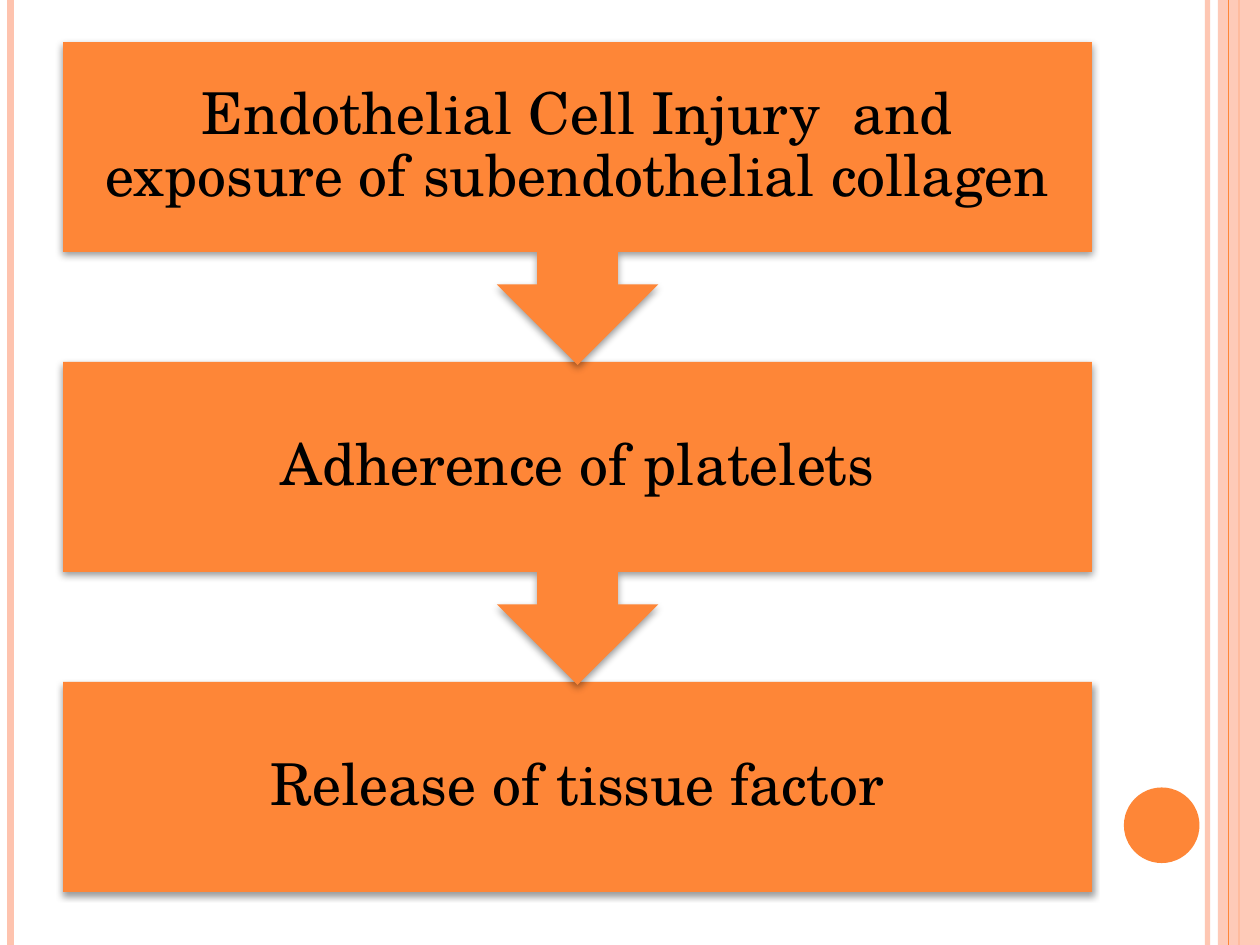
from dataclasses import dataclass

from lxml import etree
from pptx import Presentation
from pptx.dml.color import RGBColor
from pptx.enum.shapes import MSO_CONNECTOR, MSO_SHAPE
from pptx.enum.text import MSO_ANCHOR, PP_ALIGN
from pptx.oxml.ns import qn
from pptx.util import Pt

STRAIGHT = MSO_CONNECTOR.STRAIGHT
RECTANGLE = MSO_SHAPE.RECTANGLE
OVAL = MSO_SHAPE.OVAL
CALLOUT = MSO_SHAPE.UP_ARROW_CALLOUT
MIDDLE = MSO_ANCHOR.MIDDLE
CENTER = PP_ALIGN.CENTER

PAGE_WIDTH, PAGE_HEIGHT = 720, 540
STEP_LEFT, STEP_TOP, STEP_WIDTH, STEP_HEIGHT = 36, 24, 588, 120
STEP_PITCH, CALLOUT_HEIGHT = 182.86, 184.56

STEPS = [
    "Endothelial Cell Injury  and exposure of subendothelial collagen",
    "Adherence of platelets",
    "Release of tissue factor",
]


@dataclass(frozen=True)
class Theme:
    accent: RGBColor = RGBColor(0xFE, 0x86, 0x37)
    pale: RGBColor = RGBColor(0xFE, 0xC3, 0xAE)
    ink: RGBColor = RGBColor(0, 0, 0)
    font: str = "TeX Gyre Schola"
    step_size: float = 33
    step_inset: float = 18.5


class Painter:
    def __init__(self, page, theme):
        self.page = page
        self.theme = theme

    def set_opacity(self, owner, percent):
        for color in owner.iter(qn("a:srgbClr")):
            etree.SubElement(color, qn("a:alpha"), val=str(percent * 1000))

    def add_shadow(self, shape):
        effects = shape._element.spPr.find(qn("a:effectLst"))
        shadow = etree.SubElement(
            effects, qn("a:outerShdw"), blurRad=str(Pt(4.1)),
            dist=str(Pt(2)), dir="5400000", rotWithShape="0")
        etree.SubElement(shadow, qn("a:srgbClr"), val=str(self.theme.ink))
        self.set_opacity(shadow, 40)

    def stripe(self, x, color, weight, opacity=100):
        line = self.page.shapes.add_connector(
            STRAIGHT, Pt(x), Pt(0), Pt(x), Pt(PAGE_HEIGHT))
        line.line.color.rgb = color
        line.line.width = Pt(weight)
        properties = line._element.spPr
        if opacity < 100:
            self.set_opacity(properties, opacity)
        etree.SubElement(properties, qn("a:effectLst"))

    def shape(self, kind, left, top, width, height, color, opacity=100):
        shape = self.page.shapes.add_shape(
            kind, Pt(left), Pt(top), Pt(width), Pt(height))
        shape.fill.solid()
        shape.fill.fore_color.rgb = color
        shape.line.fill.background()
        shape.shadow.inherit = False
        if opacity < 100:
            self.set_opacity(shape._element.spPr, opacity)
        return shape

    def label(self, text, left, top, width, height):
        box = self.page.shapes.add_textbox(
            Pt(left), Pt(top), Pt(width), Pt(height))
        frame = box.text_frame
        frame.word_wrap = True
        frame.vertical_anchor = MIDDLE
        inset = Pt(self.theme.step_inset)
        frame.margin_left = frame.margin_right = inset
        frame.margin_top = frame.margin_bottom = inset
        para = frame.paragraphs[0]
        para.alignment = CENTER
        para.line_spacing = 0.9
        span = para.add_run()
        span.text = text
        span.font.name = self.theme.font
        span.font.size = Pt(self.theme.step_size)
        span.font.color.rgb = self.theme.ink

    def step(self, text, top, leads_on):
        kind, height = (CALLOUT, CALLOUT_HEIGHT) if leads_on else (RECTANGLE, STEP_HEIGHT)
        shape = self.shape(kind, STEP_LEFT, top, STEP_WIDTH, height, self.theme.accent)
        if leads_on:
            shape.rotation = 180
        self.add_shadow(shape)
        self.label(text, STEP_LEFT, top, STEP_WIDTH, STEP_HEIGHT)


def main():
    deck = Presentation()
    deck.slide_width, deck.slide_height = Pt(PAGE_WIDTH), Pt(PAGE_HEIGHT)
    theme = Theme()
    painter = Painter(deck.slides.add_slide(deck.slide_layouts[6]), theme)

    painter.stripe(690, theme.pale, 3, opacity=93)
    painter.stripe(6, theme.pale, 4.5)
    painter.stripe(708, theme.accent, 1.5)
    painter.shape(RECTANGLE, 696, 0, 24, PAGE_HEIGHT, theme.pale, opacity=87)
    painter.stripe(702, theme.accent, 0.75)
    painter.shape(OVAL, 642.24, 450, 43.2, 43.2, theme.accent)

    last = len(STEPS) - 1
    for index, text in reversed(list(enumerate(STEPS))):
        painter.step(text, STEP_TOP + index * STEP_PITCH, leads_on=index < last)

    deck.save("out.pptx")


if __name__ == "__main__":
    main()
